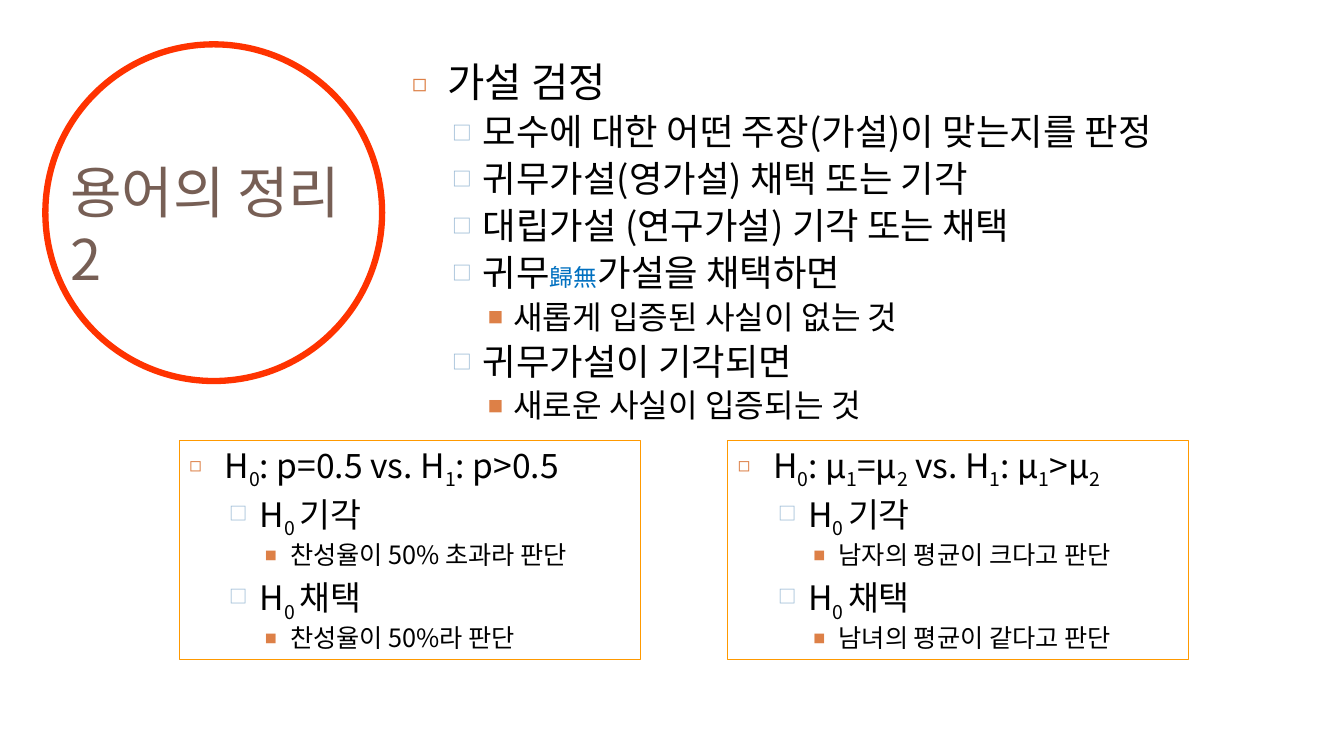
from pptx import Presentation
from pptx.dml.color import RGBColor
from pptx.enum.shapes import MSO_SHAPE
from pptx.enum.text import MSO_ANCHOR, MSO_AUTO_SIZE, PP_ALIGN
from pptx.oxml.ns import qn
from pptx.util import Inches, Pt
from lxml import etree

FONT = "Noto Sans CJK KR"
BLACK = RGBColor(0x00, 0x00, 0x00)
BROWN = RGBColor(0x77, 0x5F, 0x55)
BLUE = RGBColor(0x00, 0x70, 0xC0)
RED = RGBColor(0xFF, 0x33, 0x00)
AMBER = RGBColor(0xFF, 0x99, 0x00)
ORANGE = RGBColor(0xDD, 0x80, 0x47)
PALE_BLUE = RGBColor(0x94, 0xB6, 0xD2)

LEVELS = [
    {"margin": 0.35, "hang": 0.35, "before": 7, "mark": "◻", "color": ORANGE, "percent": 60},
    {"margin": 0.7, "hang": 0.3, "before": 5.5, "mark": "□", "color": PALE_BLUE, "percent": 54},
    {"margin": 1, "hang": 0.25, "before": 5, "mark": "■", "color": ORANGE, "percent": 48},
]

HYPOTHESIS_TESTING = [
    (0, "가설 검정"),
    (1, "모수에 대한 어떤 주장(가설)이 맞는지를 판정"),
    (1, "귀무가설(영가설) 채택 또는 기각"),
    (1, "대립가설 (연구가설) 기각 또는 채택"),
    (1, "귀무|歸無|가설을 채택하면"),
    (2, "새롭게 입증된 사실이 없는 것"),
    (1, "귀무가설이 기각되면"),
    (2, "새로운 사실이 입증되는 것"),
]
EXAMPLES = [
    ("H|0|: p=0.5 vs. H|1|: p>0.5", "찬성율이 50% 초과라 판단", "찬성율이 50%라 판단"),
    ("H|0|: μ|1|=μ|2| vs. H|1|: μ|1|>μ|2|", "남자의 평균이 크다고 판단", "남녀의 평균이 같다고 판단"),
]


class SlideBuilder:
    """Holds the text style and the current slide."""

    def __init__(self, deck):
        self.page = deck.slides.add_slide(deck.slide_layouts[5])

    def apply(self, target, formats):
        for name, value in formats.items():
            setattr(target, name, value)

    def style(self, span, size, color, baseline=None):
        self.apply(span.font, {"size": Pt(size), "name": FONT})
        span.font.color.rgb = color
        properties = span.font._element
        etree.SubElement(properties, qn("a:ea")).set("typeface", FONT)
        if baseline is not None:
            properties.set("baseline", str(baseline * 1000))

    def title(self, text, size, color, left, top, width, height):
        box = self.page.shapes.title
        self.apply(box, {"left": Inches(left), "top": Inches(top),
                         "width": Inches(width), "height": Inches(height)})
        frame = box.text_frame
        frame.text = text
        self.apply(frame, {"vertical_anchor": MSO_ANCHOR.MIDDLE, "word_wrap": True,
                           "auto_size": MSO_AUTO_SIZE.NONE})
        para = frame.paragraphs[0]
        self.apply(para, {"alignment": PP_ALIGN.LEFT, "line_spacing": 1.0})
        for span in para.runs:
            self.style(span, size, color)

    def outline(self, kind, color, weight, left, top, width, height):
        shape = self.page.shapes.add_shape(
            kind, Inches(left), Inches(top), Inches(width), Inches(height))
        shape.shadow.inherit = False
        shape.fill.background()
        shape.line.color.rgb = color
        shape.line.width = Pt(weight)
        return shape

    def text_box(self, left, top, width, height):
        return self.page.shapes.add_textbox(
            Inches(left), Inches(top), Inches(width), Inches(height))

    def bullet(self, para, level):
        properties = para._p.get_or_add_pPr()
        properties.set("marL", str(Inches(level["margin"])))
        properties.set("indent", str(-Inches(level["hang"])))
        color = etree.SubElement(properties, qn("a:buClr"))
        etree.SubElement(color, qn("a:srgbClr")).set("val", str(level["color"]))
        etree.SubElement(properties, qn("a:buSzPct")).set("val", str(level["percent"] * 1000))
        etree.SubElement(properties, qn("a:buFont")).set("typeface", FONT)
        etree.SubElement(properties, qn("a:buChar")).set("char", level["mark"])

    def outline_text(self, box, lines, sizes, accent):
        """Fills a box with bullets; text between bars takes the accent."""
        frame = box.text_frame
        self.apply(frame, {"word_wrap": True, "vertical_anchor": MSO_ANCHOR.TOP})
        for number, (depth, text) in enumerate(lines):
            para = frame.add_paragraph() if number else frame.paragraphs[0]
            level = LEVELS[depth]
            self.apply(para, {"level": depth, "alignment": PP_ALIGN.LEFT,
                              "line_spacing": 0.9, "space_before": Pt(level["before"])})
            self.bullet(para, level)
            for index, piece in enumerate(text.split("|")):
                if not piece:
                    continue
                span = para.add_run()
                span.text = piece
                plain = {"size": sizes[depth], "color": BLACK}
                self.style(span, **(plain | accent if index % 2 else plain))


def main():
    deck = Presentation()
    deck.slide_width, deck.slide_height = Inches(13.33), Inches(7.5)
    builder = SlideBuilder(deck)
    builder.title("용어의 정리\v2", 40, BROWN, 0.6, 0.96, 3.23, 2.53)
    builder.outline(MSO_SHAPE.OVAL, RED, 4.5, 0.45, 0.44, 3.34, 3.34)
    body = builder.text_box(3.99, 0.57, 8.5, 3.89)
    builder.outline_text(body, HYPOTHESIS_TESTING, (29, 26, 23),
                         {"size": 17, "color": BLUE})
    for column, (hypotheses, rejected, accepted) in enumerate(EXAMPLES):
        box = builder.outline(MSO_SHAPE.RECTANGLE, AMBER, 0.75,
                              1.78 + column * 5.44, 4.37, 4.57, 2.17)
        lines = [(0, hypotheses), (1, "H|0 |기각"), (2, rejected),
                 (1, "H|0 |채택"), (2, accepted)]
        builder.outline_text(box, lines, (24, 24, 18), {"baseline": -25})
    deck.save("out.pptx")


if __name__ == "__main__":
    main()
